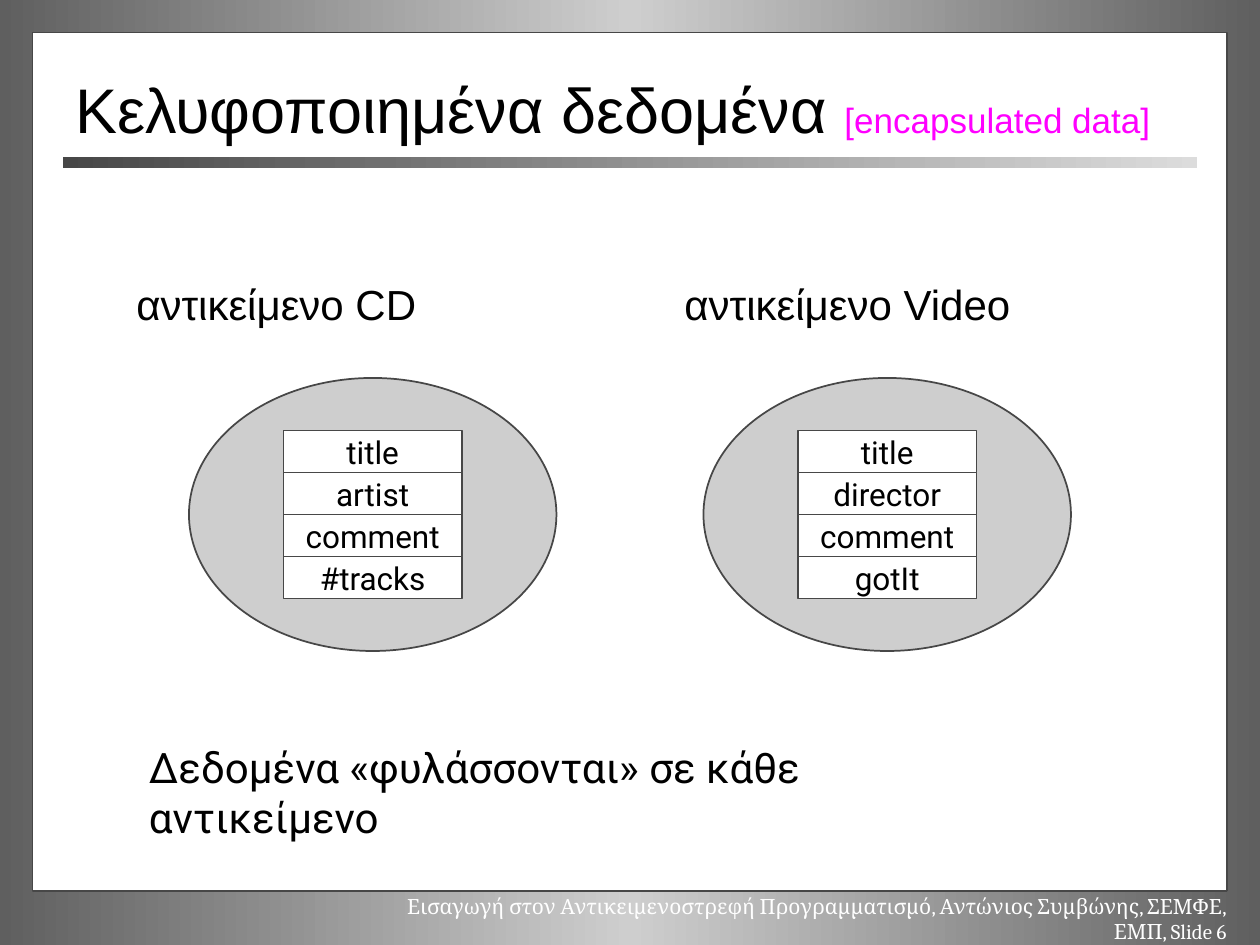
from dataclasses import dataclass
from lxml import etree
from pptx import Presentation
from pptx.dml.color import RGBColor
from pptx.enum.shapes import MSO_SHAPE
from pptx.enum.text import MSO_ANCHOR, MSO_AUTO_SIZE, PP_ALIGN
from pptx.oxml.ns import qn
from pptx.slide import Slide
from pptx.util import Inches, Pt

RECTANGLE, OVAL = MSO_SHAPE.RECTANGLE, MSO_SHAPE.OVAL
TOP, MIDDLE = MSO_ANCHOR.TOP, MSO_ANCHOR.MIDDLE
LEFT, CENTER, RIGHT = PP_ALIGN.LEFT, PP_ALIGN.CENTER, PP_ALIGN.RIGHT
GROW, FIXED = MSO_AUTO_SIZE.SHAPE_TO_FIT_TEXT, MSO_AUTO_SIZE.NONE
BLANK_LAYOUT = 6
UNITS_PER_INCH = 12


def color(value):
    return RGBColor.from_string(value)


def units(*lengths):
    return [Inches(length / UNITS_PER_INCH) for length in lengths]


def blend(fill, stop_list_query, colors):
    fill.gradient()
    fill.gradient_angle = 0
    stops = stop_list_query()[0]
    stops.clear()
    for index, value in enumerate(colors):
        position = round(100000 * index / (len(colors) - 1))
        stop = etree.SubElement(stops, qn("a:gs"), pos=str(position))
        etree.SubElement(stop, qn("a:srgbClr"), val=value)


@dataclass
class Painter:
    page: Slide
    ink: str = "000000"
    paper: str = "FFFFFF"
    outline: str = "474747"
    silver: str = "CECECE"
    edge: str = "5F5F5F"
    accent: str = "FF00FF"
    heading_font: str = "Arial"
    body_font: str = "Roboto"
    footer_font: str = "Cambria"

    def background(self):
        blend(self.page.background.fill,
              lambda: self.page.element.xpath(".//p:bgPr//a:gsLst"),
              [self.edge, self.silver, self.edge])

    def shape(self, kind, place, fill):
        shape = self.page.shapes.add_shape(kind, *units(*place))
        shape.shadow.inherit = False
        shape.fill.solid()
        shape.fill.fore_color.rgb = color(fill)
        shape.line.color.rgb = color(self.outline)
        shape.line.width = Pt(1)
        return shape

    def rule(self, place):
        bar = self.shape(RECTANGLE, place, self.outline)
        bar.line.fill.background()
        blend(bar.fill, lambda: bar.element.xpath("./p:spPr//a:gsLst"),
              [self.outline, "DCDCDC"])

    def add_spans(self, box, spans, font, align=LEFT, anchor=TOP, wrap=False, size_mode=GROW):
        frame = box.text_frame
        frame.word_wrap = wrap
        frame.auto_size = size_mode
        frame.vertical_anchor = anchor
        para = frame.paragraphs[0]
        para.alignment = align
        for text, size, ink in spans:
            span = para.add_run()
            span.text = text
            span.font.name = font
            span.font.size = Pt(size)
            span.font.color.rgb = color(ink)

    def text(self, place, spans, font, **layout):
        box = self.page.shapes.add_textbox(*units(*place))
        self.add_spans(box, spans, font, **layout)

    def instance(self, left, fields):
        top, width, height = 36, 35, 26
        self.shape(OVAL, (left, top, width, height), self.silver)
        cell_width, cell_height = 17, 4
        cell_left = left + (width - cell_width) / 2
        first_top = top + (height - cell_height * len(fields)) / 2
        for row, field in enumerate(fields):
            place = (cell_left, first_top + row * cell_height, cell_width, cell_height)
            cell = self.shape(RECTANGLE, place, self.paper)
            self.add_spans(cell, [(field, 18, self.ink)], self.body_font,
                           align=CENTER, anchor=MIDDLE, size_mode=FIXED)


def main():
    deck = Presentation()
    deck.slide_width, deck.slide_height = units(120, 90)
    painter = Painter(deck.slides.add_slide(deck.slide_layouts[BLANK_LAYOUT]))

    painter.background()
    painter.shape(RECTANGLE, (3.1, 3.1, 113.8, 81.8), painter.paper)
    painter.text((33, 84.5, 85, 3.6),
                 [("Εισαγωγή στον Αντικειμενοστρεφή Προγραμματισμό, "
                   "Αντώνιος Συμβώνης, ΣΕΜΦΕ, ΕΜΠ, Slide 6", 12, painter.paper)],
                 painter.footer_font, align=RIGHT, wrap=True)
    painter.rule((6, 15, 108, 1))
    painter.text((6, 6.6, 108, 7.4),
                 [("Κελυφοποιημένα δεδομένα ", 36, painter.ink),
                  ("[encapsulated data]", 20, painter.accent)],
                 painter.heading_font, anchor=MIDDLE, wrap=True, size_mode=FIXED)

    painter.instance(18, ["title", "artist", "comment", "#tracks"])
    painter.instance(67, ["title", "director", "comment", "gotIt"])
    for left, width, label in ((11.8, 29.2, "αντικείμενο CD"), (64, 33.6, "αντικείμενο Video")):
        painter.text((left, 25.9, width, 6), [(label, 24, painter.ink)], painter.heading_font)
    painter.text((13, 70, 85.2, 6),
                 [("Δεδομένα «φυλάσσονται» σε κάθε αντικείμενο", 24, painter.ink)],
                 painter.body_font, wrap=True)

    deck.save("out.pptx")


if __name__ == "__main__":
    main()
